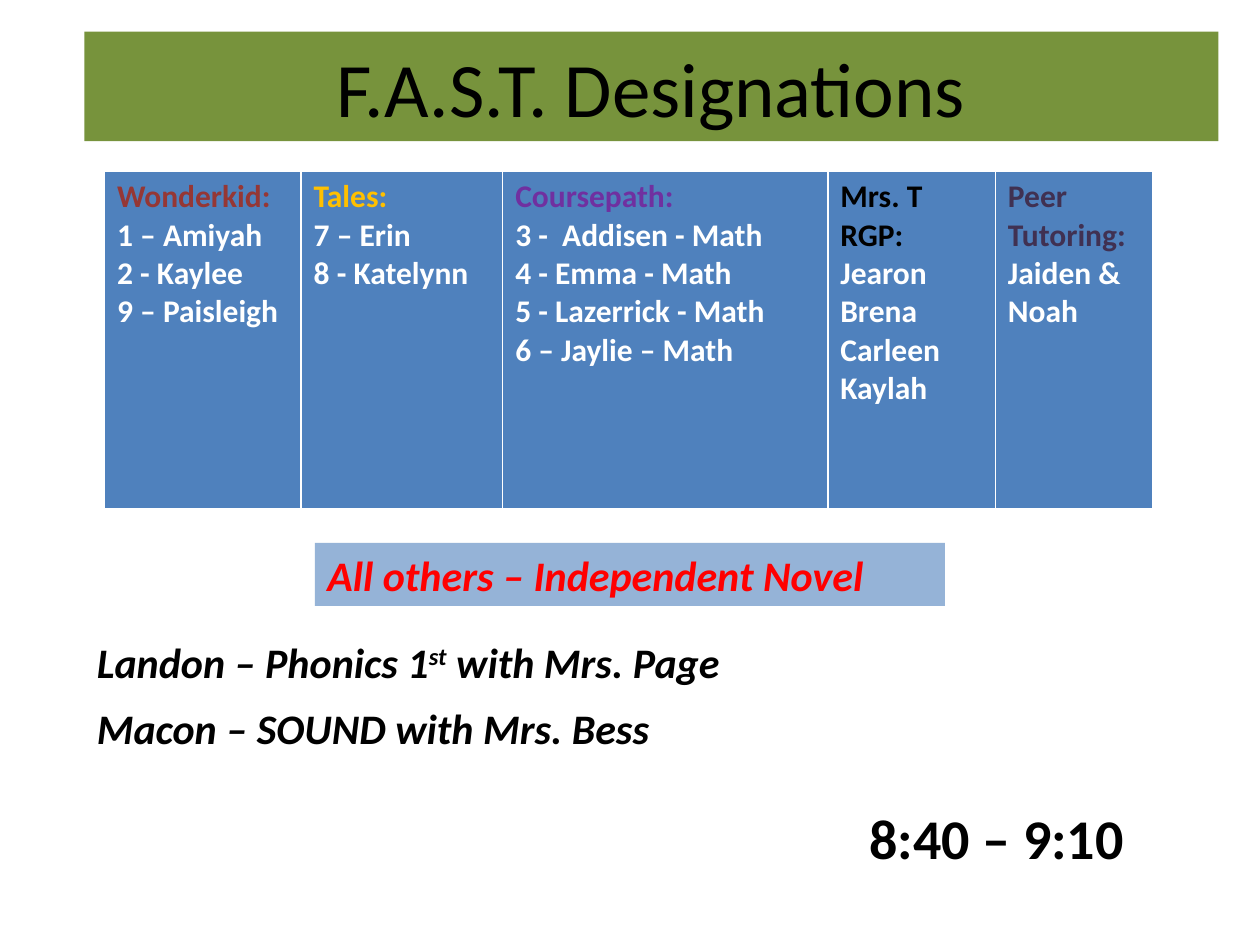
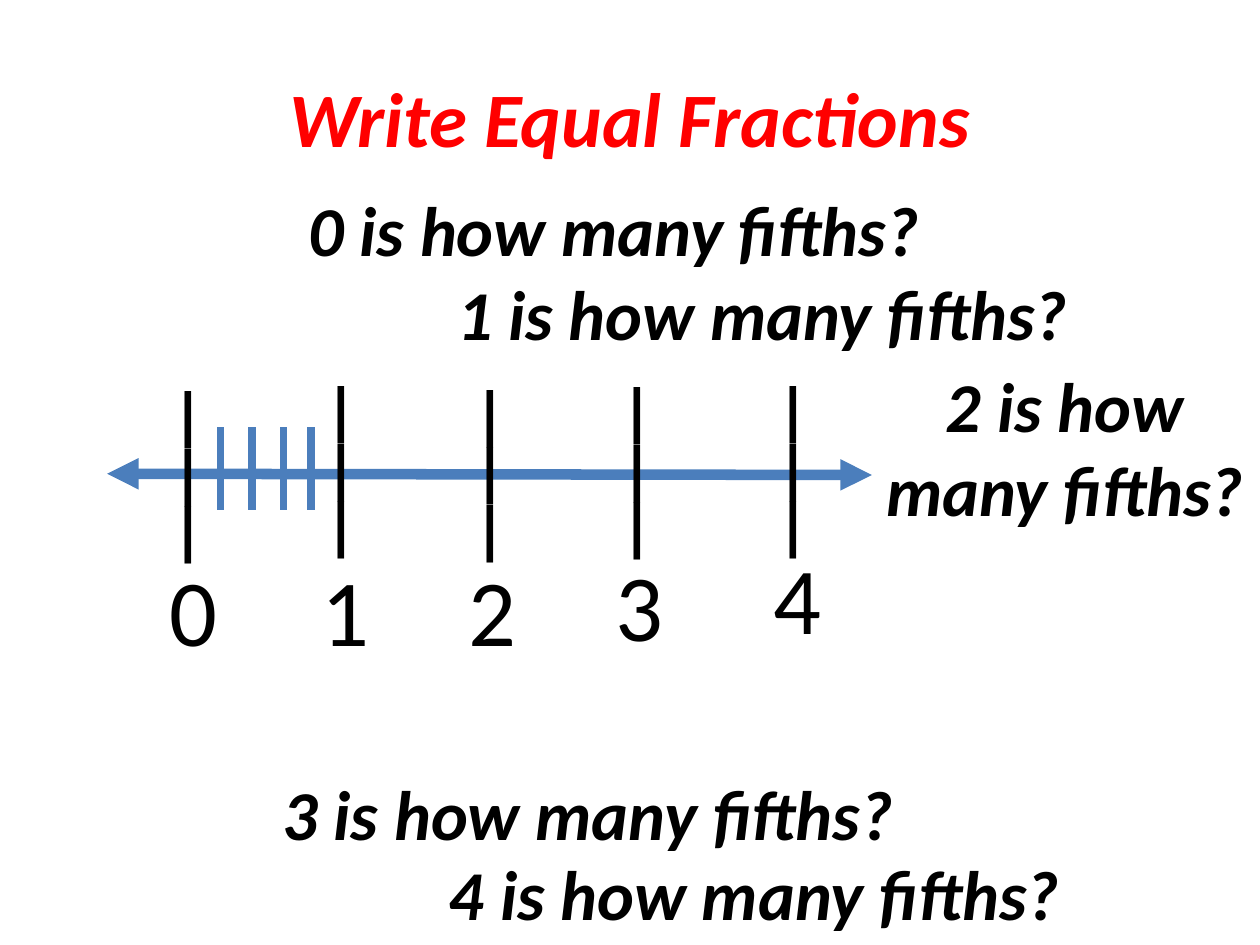
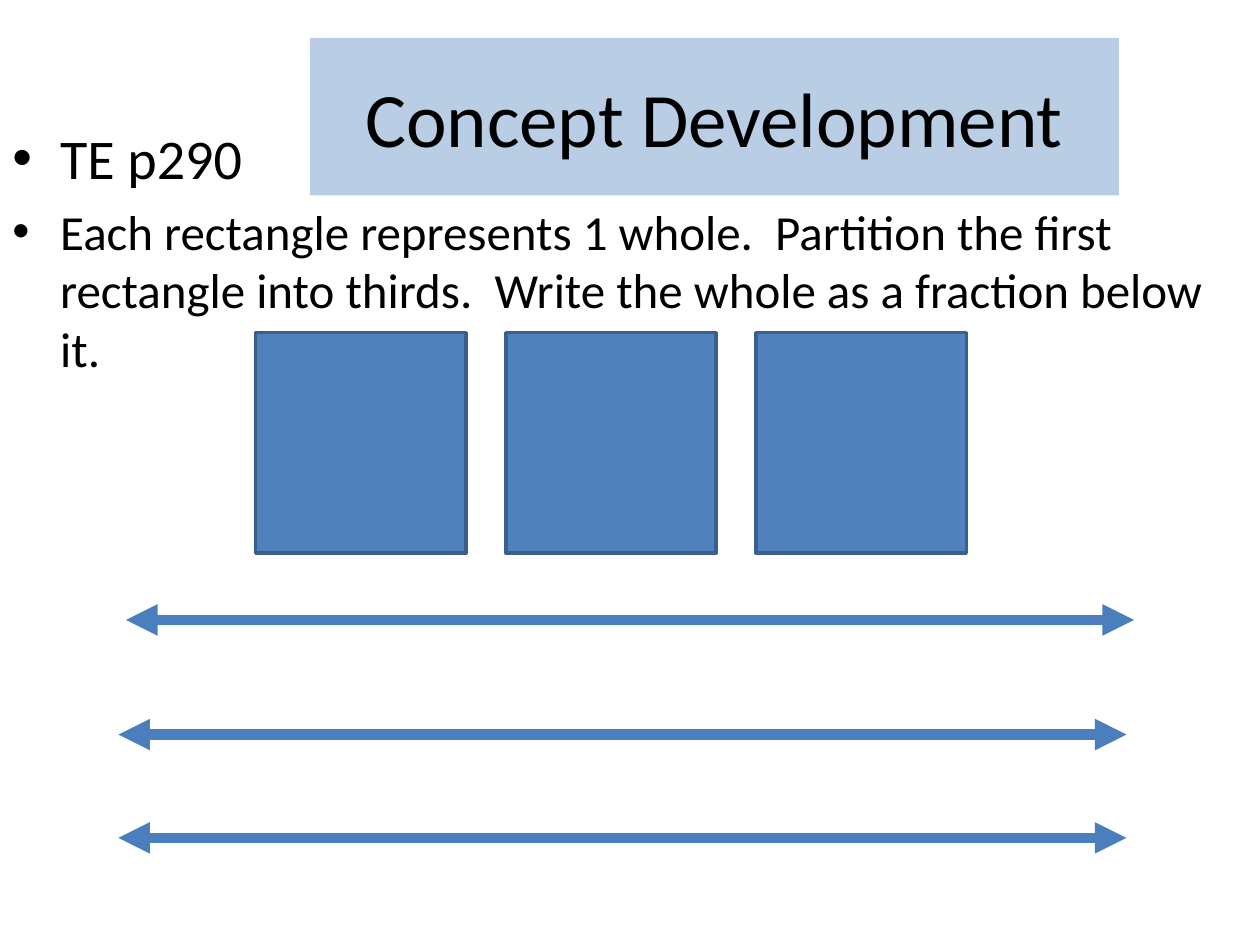
from dataclasses import dataclass
from typing import NamedTuple

import lxml.etree
import pptx
import pptx.dml.color
import pptx.enum.shapes
import pptx.enum.text
import pptx.oxml.ns
import pptx.util

Inches = pptx.util.Inches
Pt = pptx.util.Pt
ALIGN = pptx.enum.text.PP_ALIGN
qn = pptx.oxml.ns.qn

FONT = "Calibri"
BLACK, WHITE, RED = "000000", "FFFFFF", "FF0000"
BLUE, LINE_BLUE, EDGE_BLUE = "4F81BD", "4B7EBC", "3A5F8C"
GREEN_BAND, PALE_BAND, NOTE_BAND = "77933C", "B9CDE5", "95B3D7"

TITLE = {"size": Pt(44)}
EMPHASIS = {"bold": True, "italic": True}
NOTE = {"size": Pt(24), **EMPHASIS}
QUESTION = {"size": Pt(40), **EMPHASIS}


class Box(NamedTuple):
    left: float
    top: float
    width: float
    height: float

    def lengths(self) -> list:
        return [Inches(value) for value in self]


class Group(NamedTuple):
    """A table column: its width, heading lines and members."""
    width: float
    color: str
    heading: list
    members: list


class Mark(NamedTuple):
    """A whole number on the number line."""
    tick_left: float
    tick_top: float
    label_left: float
    label_top: float


@dataclass
class Line:
    start: tuple
    end: tuple
    weight: float
    arrows: bool = False


GROUPS = [
    Group(1.56, "953735", ["Wonderkid:"], ["1 – Amiyah", "2 - Kaylee", "9 – Paisleigh"]),
    Group(1.6, "FFC000", ["Tales:"], ["7 – Erin", "8 - Katelynn"]),
    Group(2.58, "7030A0", ["Coursepath:"],
          ["3 -  Addisen - Math", "4 - Emma - Math", "5 - Lazerrick - Math", "6 – Jaylie – Math"]),
    Group(1.33, BLACK, ["Mrs. T", "RGP:"], ["Jearon", "Brena", "Carleen", "Kaylah"]),
    Group(1.25, "403152", ["Peer Tutoring:"], ["Jaiden & Noah"]),
]
MARKS = [
    Mark(0.96, 3.4, 1.25, 4.33),
    Mark(2.17, 3.36, 2.45, 4.33),
    Mark(3.35, 3.39, 3.62, 4.33),
    Mark(4.52, 3.37, 4.79, 4.29),
    Mark(5.76, 3.36, 6.04, 4.24),
]
QUESTION_BOXES = [
    Box(0.83, 1.43, 8.08, 0.77),
    Box(2.55, 2.1, 7, 0.77),
    Box(6.8, 2.83, 3.3, 1.45),
    Box(1.08, 6.07, 7.17, 0.77),
    Box(2.4, 6.7, 7.17, 0.77),
]


def rgb(color: str):
    return pptx.dml.color.RGBColor.from_string(color)


def paint(target, color: str) -> None:
    target.fill.solid()
    target.fill.fore_color.rgb = rgb(color)


def add_run(paragraph, text: str, style: dict, color: str = BLACK):
    run = paragraph.add_run()
    run.text = text
    for name, value in {"name": FONT, **style}.items():
        setattr(run.font, name, value)
    run.font.color.rgb = rgb(color)
    return run


def add_title(prs, text: str, box: Box, band: str = "", color: str = BLACK, style: dict = TITLE):
    """Add a title-only slide and format its title."""
    slide = prs.slides.add_slide(prs.slide_layouts[5])
    title = slide.shapes.title
    title.left, title.top, title.width, title.height = box.lengths()
    if band:
        paint(title, band)
    title.text_frame.vertical_anchor = pptx.enum.text.MSO_ANCHOR.MIDDLE
    paragraph = title.text_frame.paragraphs[0]
    paragraph.alignment = ALIGN.CENTER
    add_run(paragraph, text, style, color)
    return slide


def add_text(slide, box: Box, text: str, style: dict, color: str = BLACK, align=ALIGN.LEFT):
    area = slide.shapes.add_textbox(*box.lengths())
    area.text_frame.word_wrap = True
    area.text_frame.auto_size = pptx.enum.text.MSO_AUTO_SIZE.SHAPE_TO_FIT_TEXT
    paragraph = area.text_frame.paragraphs[0]
    paragraph.alignment = align
    add_run(paragraph, text, style, color)
    return area


def add_line(slide, line: Line) -> None:
    connector = slide.shapes.add_connector(
        pptx.enum.shapes.MSO_CONNECTOR.STRAIGHT,
        *(Inches(value) for value in (*line.start, *line.end)))
    connector.line.color.rgb = rgb(LINE_BLUE)
    connector.line.width = Pt(line.weight)
    if line.arrows:
        outline = connector.line._get_or_add_ln()
        for end in ("a:headEnd", "a:tailEnd"):
            lxml.etree.SubElement(outline, qn(end), type="triangle")
    lxml.etree.SubElement(connector._element.spPr, qn("a:effectLst"))


def add_borders(cell) -> None:
    properties = cell._tc.get_or_add_tcPr()
    for index, (side, weight) in enumerate({"lnL": 1, "lnR": 1, "lnT": 1, "lnB": 3}.items()):
        border = lxml.etree.Element(qn(f"a:{side}"), w=str(Pt(weight)))
        fill = lxml.etree.SubElement(border, qn("a:solidFill"))
        lxml.etree.SubElement(fill, qn("a:srgbClr"), val=WHITE)
        properties.insert(index, border)


def add_bullet(paragraph) -> None:
    properties = paragraph._p.get_or_add_pPr()
    properties.set("marL", str(Inches(0.38)))
    properties.set("indent", str(Inches(-0.38)))
    lxml.etree.SubElement(properties, qn("a:buFont"), typeface="Arial")
    lxml.etree.SubElement(properties, qn("a:buChar"), char="•")


def add_groups_table(slide) -> None:
    frame = slide.shapes.add_table(1, len(GROUPS), *Box(0.83, 1.36, 8.32, 2.69).lengths())
    table = frame.table
    table.first_row = table.horz_banding = False
    style = {"size": Pt(18), "bold": True}
    for column, cell, group in zip(table.columns, table.rows[0].cells, GROUPS):
        column.width = Inches(group.width)
        paint(cell, BLUE)
        add_borders(cell)
        lines = [(text, group.color) for text in group.heading]
        lines += [(text, WHITE) for text in group.members]
        for index, (text, color) in enumerate(lines):
            frame_text = cell.text_frame
            paragraph = frame_text.add_paragraph() if index else frame_text.paragraphs[0]
            add_run(paragraph, text, style, color)


def build_designations(prs) -> None:
    slide = add_title(prs, "F.A.S.T. Designations", Box(0.67, 0.25, 9, 0.87), GREEN_BAND)
    add_text(slide, Box(6.5, 6.33, 2.92, 0.64), "8:40 – 9:10 ",
             {"size": Pt(32), "bold": True}, align=ALIGN.CENTER)
    add_groups_table(slide)
    landon = add_text(slide, Box(0.67, 5, 5.33, 0.5), "Landon – Phonics 1", NOTE)
    paragraph = landon.text_frame.paragraphs[0]
    ordinal = add_run(paragraph, "st", NOTE)
    ordinal._r.get_or_add_rPr().set("baseline", "30000")
    add_run(paragraph, " with Mrs. Page", NOTE)
    add_text(slide, Box(0.67, 5.53, 4.83, 0.5), "Macon – SOUND with Mrs. Bess", NOTE)
    others = add_text(slide, Box(2.5, 4.31, 5, 0.5), "All others – Independent Novel", NOTE, RED)
    paint(others, NOTE_BAND)


def build_fractions(prs) -> None:
    slide = add_title(prs, "Write Equal Fractions", Box(0.5, 0.3, 9, 1.25),
                      color=RED, style={**TITLE, **EMPHASIS})
    add_line(slide, Line((0.85, 3.76), (6.92, 3.77), 6, arrows=True))
    for number, (mark, question_box) in enumerate(zip(MARKS, QUESTION_BOXES)):
        add_text(slide, question_box, f"{number} is how many fifths?", QUESTION,
                 align=ALIGN.CENTER)
        tick = add_text(slide, Box(mark.tick_left, mark.tick_top, 1.99, 1.21),
                        "___", {"size": Pt(66)})
        tick.rotation = 90
        add_text(slide, Box(mark.label_left, mark.label_top, 0.67, 1.01),
                 str(number), {"size": Pt(54)})
    for fifth in (1.75, 2, 2.25, 2.47):
        add_line(slide, Line((fifth, 3.39), (fifth, 4.05), 4.5))


def build_concept(prs) -> None:
    slide = add_title(prs, "Concept Development", Box(2.46, 0.3, 6.42, 1.25), PALE_BAND)
    task = slide.shapes.add_textbox(*Box(0, 0.93, 10, 2.45).lengths()).text_frame
    task.word_wrap = True
    page = task.paragraphs[0]
    add_bullet(page)
    add_run(page, "TE p290", {"size": Pt(32)})
    directions = task.add_paragraph()
    directions.space_before = Pt(6)
    add_bullet(directions)
    add_run(directions, "Each rectangle represents 1 whole.  Partition the first rectangle "
            "into thirds.  Write the whole as a fraction below it.", {"size": Pt(28)})
    for index in range(3):
        whole = slide.shapes.add_shape(
            pptx.enum.shapes.MSO_SHAPE.RECTANGLE,
            *Box(2.03 + 1.985 * index, 2.64, 1.67, 1.75).lengths())
        whole.shadow.inherit = False
        paint(whole, BLUE)
        whole.line.color.rgb = rgb(EDGE_BLUE)
        whole.line.width = Pt(2)
    for left, top in ((1, 4.92), (0.94, 5.83), (0.94, 6.65)):
        add_line(slide, Line((left, top), (left + 8, top), 6, arrows=True))


def main() -> None:
    prs = pptx.Presentation()
    prs.slide_width, prs.slide_height = Inches(10), Inches(7.5)
    build_designations(prs)
    build_fractions(prs)
    build_concept(prs)
    prs.save("out.pptx")


if __name__ == "__main__":
    main()
